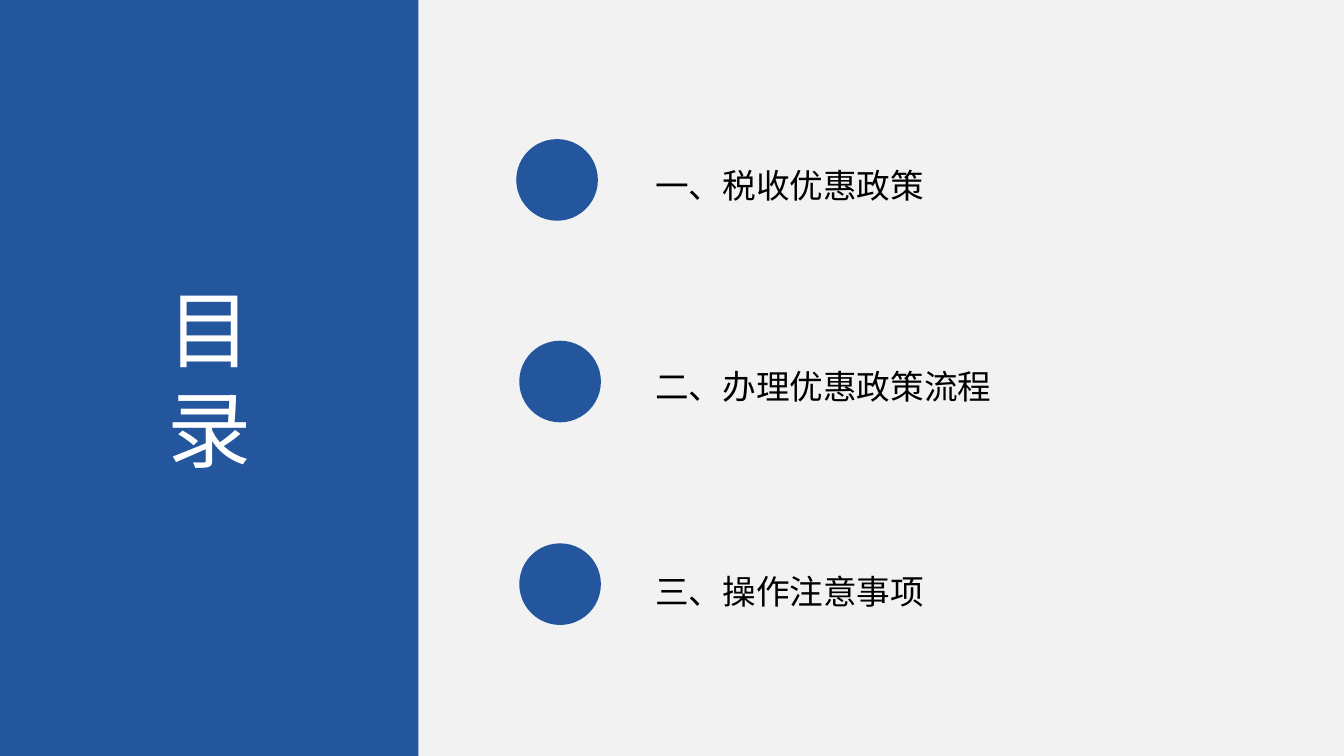
from dataclasses import dataclass

from lxml import etree
from pptx import Presentation
from pptx.dml.color import RGBColor
from pptx.enum.shapes import MSO_SHAPE
from pptx.enum.text import MSO_ANCHOR, MSO_AUTO_SIZE, PP_ALIGN
from pptx.oxml.ns import qn
from pptx.slide import Slide
from pptx.util import Inches, Pt

RECTANGLE = MSO_SHAPE.RECTANGLE
OVAL = MSO_SHAPE.OVAL
CENTER = PP_ALIGN.CENTER
MIDDLE = MSO_ANCHOR.MIDDLE
GROW = MSO_AUTO_SIZE.SHAPE_TO_FIT_TEXT

BLUE, WHITE, BLACK, PALE_GRAY = "24569D", "FFFFFF", "000000", "F2F2F2"
SANS, CJK = "DejaVu Sans", "Noto Sans CJK SC"
DOT_SIZE = 0.81


@dataclass
class Chapter:
    title: str
    font: str
    dot_left: float
    dot_top: float
    title_top: float


CHAPTERS = [
    Chapter("一、税收优惠政策", CJK, 5.12, 1.38, 1.49),
    Chapter("二、办理优惠政策流程", CJK, 5.15, 3.38, 3.48),
    Chapter("三、操作注意事项", SANS, 5.15, 5.39, 5.51),
]


def color(hex_value: str) -> RGBColor:
    return RGBColor.from_string(hex_value)


def add_blue_shape(slide: Slide, kind: MSO_SHAPE, left: float, top: float,
                   width: float, height: float):
    shape = slide.shapes.add_shape(
        kind, Inches(left), Inches(top), Inches(width), Inches(height))
    shape.shadow.inherit = False
    shape.fill.solid()
    shape.fill.fore_color.rgb = color(BLUE)
    shape.line.fill.background()
    return shape


def add_run(paragraph, text: str, size: float, font: str, hex_value: str) -> None:
    run = paragraph.add_run()
    run.text = text
    run.font.size = Pt(size)
    run.font.color.rgb = color(hex_value)
    run.font.name = font
    # Chinese characters take the East Asian typeface
    east_asian = etree.SubElement(run.font._element, qn("a:ea"))
    east_asian.set("typeface", font)


def add_side_panel(slide: Slide) -> None:
    panel = add_blue_shape(slide, RECTANGLE, 0, 0, 4.15, 7.5)
    frame = panel.text_frame
    frame.vertical_anchor = MIDDLE
    for index, character in enumerate("目录"):
        paragraph = frame.add_paragraph() if index else frame.paragraphs[0]
        paragraph.alignment = CENTER
        add_run(paragraph, character, 60, SANS, WHITE)


def add_chapter(slide: Slide, chapter: Chapter) -> None:
    add_blue_shape(slide, OVAL, chapter.dot_left, chapter.dot_top, DOT_SIZE, DOT_SIZE)
    title = slide.shapes.add_textbox(
        Inches(6.4), Inches(chapter.title_top), Inches(6.49), Inches(0.56))
    frame = title.text_frame
    frame.word_wrap = True
    frame.auto_size = GROW
    paragraph = frame.paragraphs[0]
    paragraph.line_spacing = 1.25
    add_run(paragraph, chapter.title, 24, chapter.font, BLACK)


def main() -> None:
    deck = Presentation()
    deck.slide_width, deck.slide_height = Inches(13.33), Inches(7.5)
    slide = deck.slides.add_slide(deck.slide_layouts[6])

    # Background
    slide.background.fill.solid()
    slide.background.fill.fore_color.rgb = color(PALE_GRAY)

    # Contents heading and chapter list
    add_side_panel(slide)
    for chapter in CHAPTERS:
        add_chapter(slide, chapter)

    deck.save("out.pptx")


if __name__ == "__main__":
    main()
